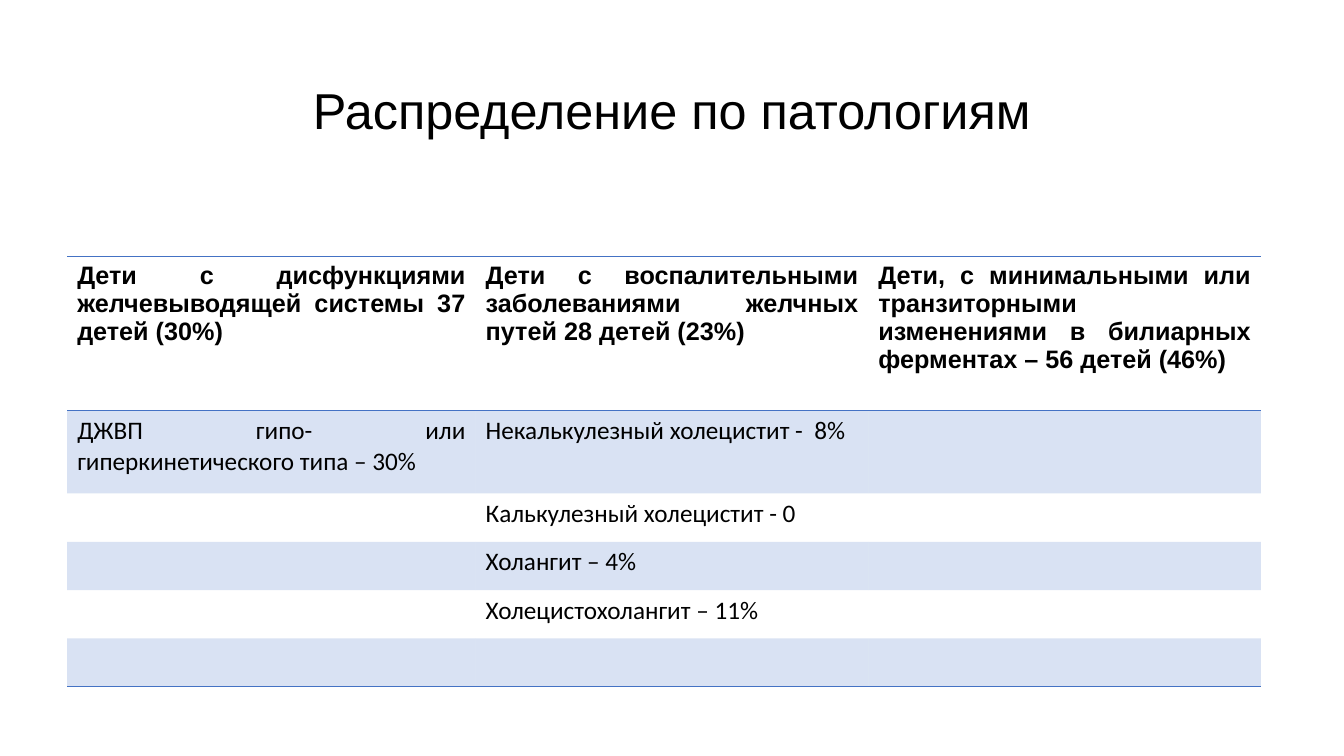
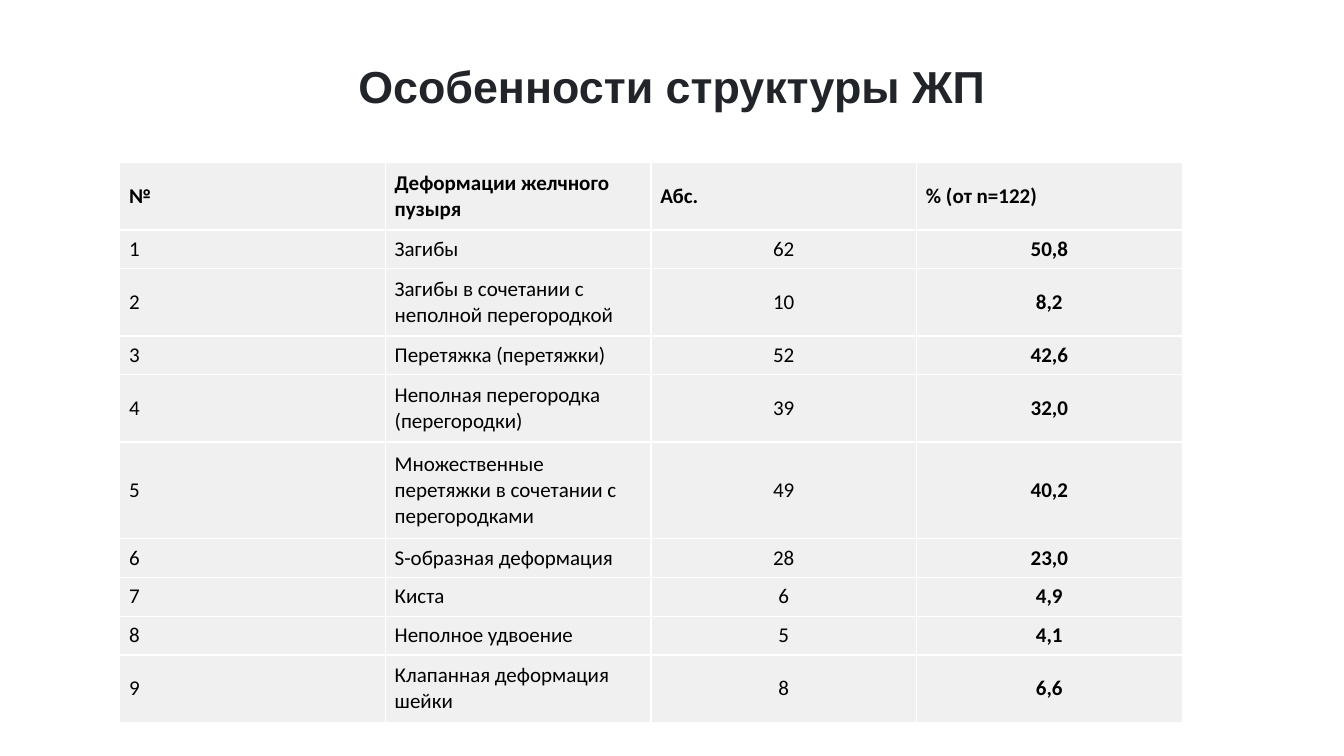
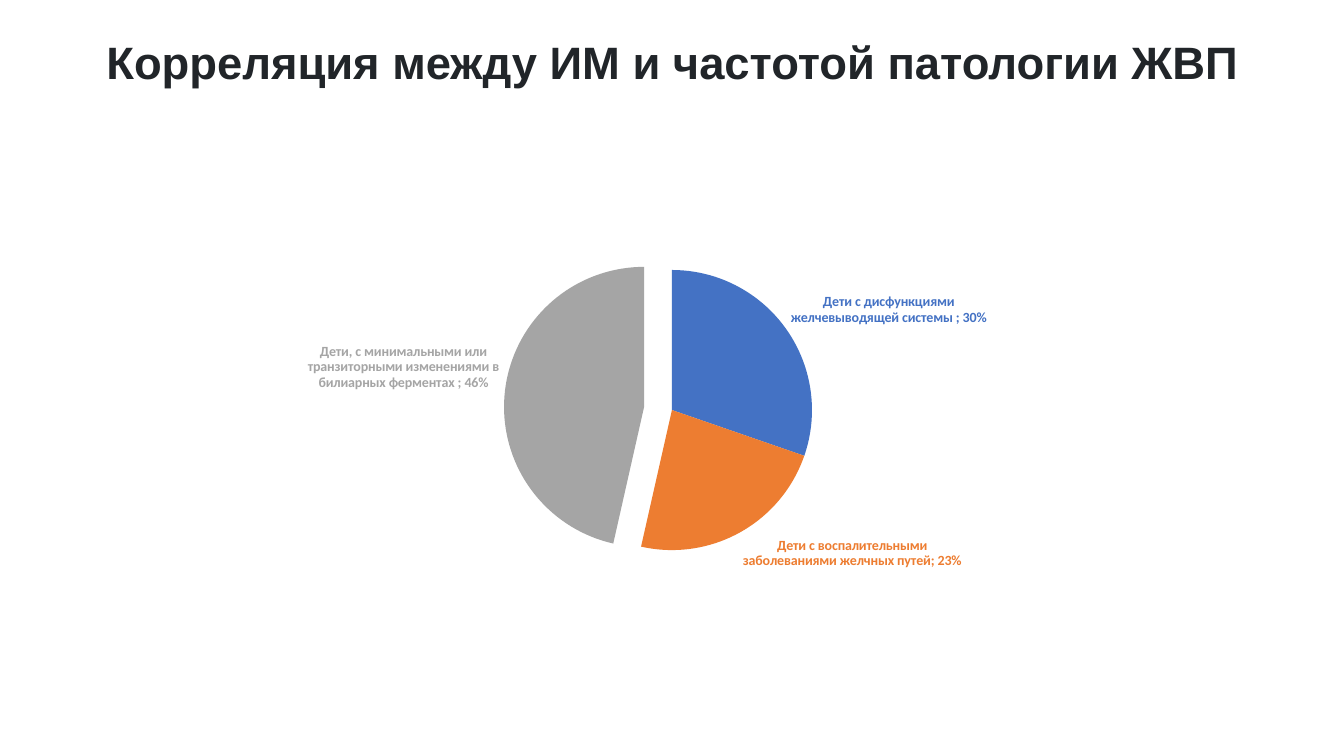
from pptx import Presentation
from pptx.chart.data import CategoryChartData
from pptx.dml.color import RGBColor
from pptx.enum.chart import XL_CHART_TYPE, XL_LABEL_POSITION
from pptx.enum.text import MSO_ANCHOR, PP_ALIGN
from pptx.oxml import parse_xml
from pptx.oxml.ns import nsdecls, qn
from pptx.util import Pt

PX = 9525
COLORS = {
    "black": "000000", "ink": "212529", "white": "FFFFFF", "pale": "F0F0F0",
    "blue": "4472C4", "orange": "ED7D31", "gray": "A5A5A5",
}
PLAIN = "{2D5ABB26-0587-4C30-8999-92F81FD0307C}"


def px(*sizes):
    return [size * PX for size in sizes]


def rgb(name):
    return RGBColor.from_string(COLORS[name])


class Deck:
    def __init__(self):
        self.file = Presentation()
        self.file.slide_width, self.file.slide_height = px(1280, 720)
        self.slide = None

    def page(self):
        self.slide = self.file.slides.add_slide(self.file.slide_layouts[6])

    def style(self, font, size, color="black", bold=False, face="Calibri"):
        font.name, font.size, font.bold = face, Pt(size), bold
        font.color.rgb = rgb(color)

    def title(self, text, box, size, color="ink", bold=True, anchor=MSO_ANCHOR.MIDDLE):
        frame = self.slide.shapes.add_textbox(*px(*box)).text_frame
        frame.word_wrap = True
        frame.vertical_anchor = anchor
        frame.margin_top = frame.margin_bottom = 0
        para = frame.paragraphs[0]
        para.text = text
        para.alignment = PP_ALIGN.CENTER
        para.line_spacing = 0.9
        self.style(para.font, size, color, bold, "Arial")

    def table(self, left, top, cols, rows):
        shape = self.slide.shapes.add_table(
            len(rows), len(cols), *px(left, top, sum(cols), sum(rows)))
        grid = shape.table
        grid.first_row = grid.horz_banding = False
        grid._tbl.tblPr.find(qn("a:tableStyleId")).text = PLAIN
        for col, width in zip(grid.columns, px(*cols)):
            col.width = width
        for row, height in zip(grid.rows, px(*rows)):
            row.height = height
        return grid

    def cell(self, cell, text, size, align, bold=False, face="Calibri"):
        para = cell.text_frame.paragraphs[0]
        para.text = text
        para.alignment = align
        self.style(para.font, size, bold=bold, face=face)

    def fill(self, cell, color=None, alpha=100):
        if not color:
            cell.fill.background()
            return
        cell.fill.solid()
        cell.fill.fore_color.rgb = rgb(color)
        if alpha < 100:
            tone = cell._tc.tcPr.find(".//" + qn("a:srgbClr"))
            tone.append(parse_xml(f'<a:alpha {nsdecls("a")} val="{alpha * 1000}"/>'))

    def edges(self, cell, sides, color):
        for spot, side in enumerate(sides):
            cell._tc.tcPr.insert(spot, parse_xml(
                f'<a:ln{side} {nsdecls("a")} w="12700"><a:solidFill>'
                f'<a:srgbClr val="{COLORS[color]}"/></a:solidFill></a:ln{side}>'))

    def pie(self, box, parts, burst):
        data = CategoryChartData(number_format="0%")
        data.categories = [name for name, _, _ in parts]
        data.add_series("Series 1", [value for _, value, _ in parts])
        chart = self.slide.shapes.add_chart(XL_CHART_TYPE.PIE, *px(*box), data).chart
        chart.has_legend = chart.has_title = False
        self.style(chart.font, 10)
        series = chart.plots[0].series[0]
        for spot, (_, _, color) in enumerate(parts):
            point = series.points[spot]
            point.format.fill.solid()
            point.format.fill.fore_color.rgb = rgb(color)
            point.format.line.fill.background()
            self.style(point.data_label.font, 10, color, True)
            point.data_label.position = XL_LABEL_POSITION.OUTSIDE_END
        root = chart._chartSpace
        for label in root.xpath(".//c:dLbl"):
            label.find(qn("c:showCatName")).set("val", "1")
            label.find(qn("c:showVal")).set("val", "1")
            label.find(qn("c:showPercent")).set("val", "0")
            label.append(parse_xml(f'<c:separator {nsdecls("c")}>; </c:separator>'))
        wedge = root.xpath(".//c:dPt")[burst]
        wedge.find(qn("c:spPr")).addprevious(
            parse_xml(f'<c:explosion {nsdecls("c")} val="20"/>'))
        area = root.xpath(".//c:plotArea")[0]
        for old in area.findall(qn("c:layout")):
            area.remove(old)
        modes = '<c:layoutTarget val="inner"/><c:xMode val="edge"/><c:yMode val="edge"/>'
        frame = '<c:x val="0"/><c:y val="0.136"/><c:w val="1"/><c:h val="0.557"/>'
        area.insert(0, parse_xml(
            f'<c:layout {nsdecls("c")}><c:manualLayout>{modes}{frame}'
            '</c:manualLayout></c:layout>'))


GROUPS = [
    ["Дети с дисфункциями желчевыводящей системы 37 детей (30%)",
     "Дети с воспалительными заболеваниями желчных путей 28 детей (23%)",
     "Дети, с минимальными или транзиторными изменениями в билиарных ферментах – 56 детей (46%)"],
    ["ДЖВП гипо- или гиперкинетического типа – 30%", "Некалькулезный холецистит -  8%", ""],
    ["", "Калькулезный холецистит - 0", ""],
    ["", "Холангит – 4%", ""],
    ["", "Холецистохолангит – 11%", ""],
    ["", "", ""],
]
FORMS = [
    ("№", "Деформации желчного пузыря", "Абс.", "% (от n=122)"),
    ("1", "Загибы", "62", "50,8"),
    ("2", "Загибы в сочетании с неполной перегородкой", "10", "8,2"),
    ("3", "Перетяжка (перетяжки)", "52", "42,6"),
    ("4", "Неполная перегородка (перегородки)", "39", "32,0"),
    ("5", "Множественные перетяжки в сочетании с перегородками", "49", "40,2"),
    ("6", "S-образная деформация", "28", "23,0"),
    ("7", "Киста", "6", "4,9"),
    ("8", "Неполное удвоение", "5", "4,1"),
    ("9", "Клапанная деформация шейки", "8", "6,6"),
]
SHARES = [
    ("Дети с дисфункциями желчевыводящей системы ", 0.3, "blue"),
    ("Дети с воспалительными заболеваниями желчных путей", 0.23, "orange"),
    ("Дети, с минимальными или транзиторными изменениями в билиарных ферментах ", 0.46, "gray"),
]


def groups(deck):
    deck.page()
    deck.title("Распределение по патологиям", (88, 38, 1104, 139), 36, "black", False)
    grid = deck.table(64, 244, [389, 374, 374], [147, 79] + [46] * 4)
    for row, texts in enumerate(GROUPS):
        head = row == 0
        for col, text in enumerate(texts):
            cell = grid.cell(row, col)
            deck.cell(cell, text, 18, PP_ALIGN.JUSTIFY, head, "Arial" if head else "Calibri")
            deck.fill(cell, "blue" if row % 2 else None, 20)
            if head:
                deck.edges(cell, "TB", "blue")
            elif row == len(GROUPS) - 1:
                deck.edges(cell, "B", "blue")


def forms(deck):
    deck.page()
    deck.title("Особенности структуры ЖП", (88, 15, 1104, 139), 32)
    one, two, three = 37, 64, 92
    rows = [two, one, two, one, two, three, one, one, one, two]
    grid = deck.table(114, 155, [253] * 4, rows)
    for row, texts in enumerate(FORMS):
        for col, text in enumerate(texts):
            cell = grid.cell(row, col)
            align = PP_ALIGN.CENTER if row and col > 1 else PP_ALIGN.LEFT
            deck.cell(cell, text, 15, align, row == 0 or col == 3)
            cell.vertical_anchor = MSO_ANCHOR.MIDDLE
            cell.margin_left, cell.margin_right = px(9, 9)
            cell.margin_top, cell.margin_bottom = px(4, 4)
            deck.fill(cell, "pale")
            deck.edges(cell, "LRTB", "white")


def shares(deck):
    deck.page()
    deck.title("Корреляция между ИМ и частотой патологии ЖВП",
               (82, 38, 1117, 104), 32.4, anchor=MSO_ANCHOR.TOP)
    deck.pie((88, 192, 1104, 479), SHARES, 2)


def main():
    deck = Deck()
    groups(deck)
    forms(deck)
    shares(deck)
    deck.file.save("out.pptx")


if __name__ == "__main__":
    main()
